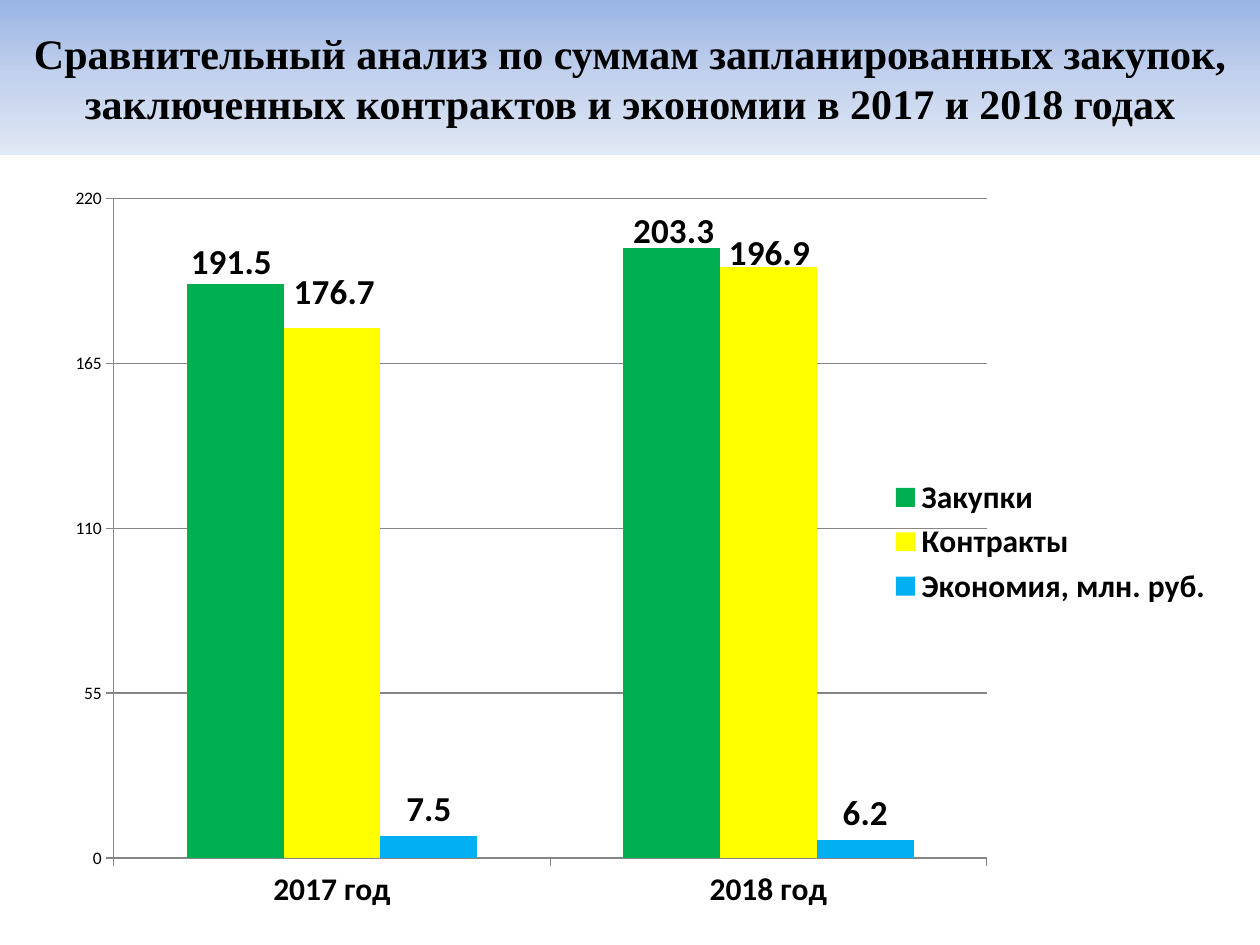
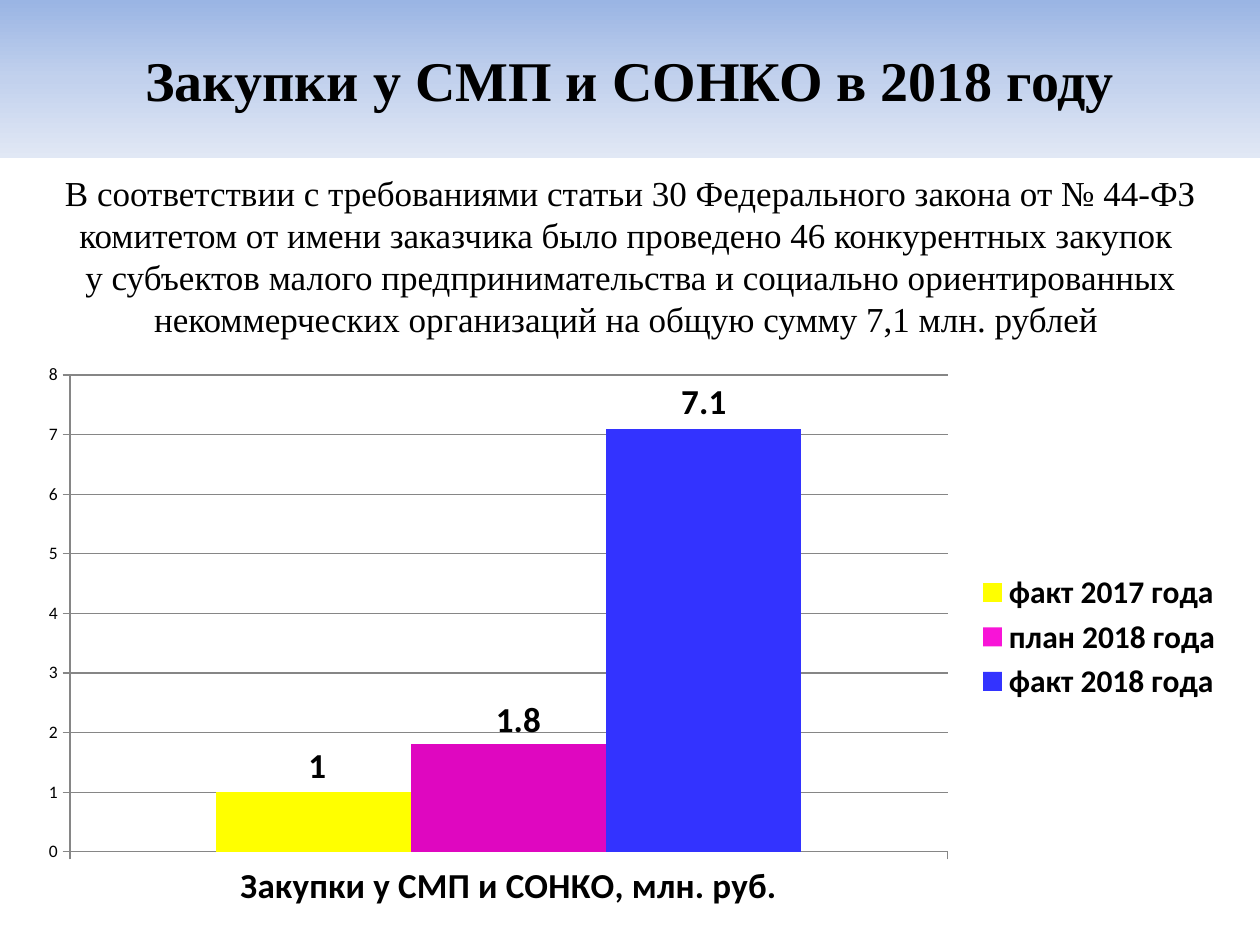
from copy import deepcopy
from dataclasses import dataclass, field

from lxml.etree import SubElement
from pptx import Presentation
from pptx.chart.data import CategoryChartData
from pptx.dml.color import RGBColor
from pptx.enum.chart import (XL_CHART_TYPE, XL_LABEL_POSITION,
                             XL_LEGEND_POSITION, XL_TICK_MARK)
from pptx.enum.text import MSO_ANCHOR, PP_ALIGN
from pptx.oxml.ns import qn
from pptx.util import Inches, Pt

W, H = Inches(10), Inches(7.5)
COLORS = {
    "text": "000000", "axis": "868686",
    "band_top": "9AB5E4", "band_mid": "C2D1ED", "band_low": "E1E8F5",
    "green": "00B050", "yellow": "FFFF00", "sky": "00B0F0",
    "pink": "F814D7", "magenta": "DF07C0", "blue": "3333FF",
}
BAND_STOPS = (("band_top", 0), ("band_mid", 0.5), ("band_low", 1))
SERIF, SANS = "Times New Roman", "Calibri"


@dataclass
class Box:
    """Left, top, width and height as percent of the enclosing area."""
    x: float
    y: float
    w: float
    h: float

    def emu(self) -> tuple[int, ...]:
        return tuple(int(side * share / 100) for side, share in
                     ((W, self.x), (H, self.y), (W, self.w), (H, self.h)))


@dataclass
class Series:
    name: str
    values: tuple[float, ...]
    color: str
    point_color: str = ""
    # Label shifts (x, y) per point, in percent of the chart
    shifts: dict[int, tuple[float, float]] = field(default_factory=dict)


@dataclass
class BarChart:
    box: Box
    plot: Box
    categories: tuple[str, ...]
    series: tuple[Series, ...]
    top: float
    step: float
    category_size: int


def rgb(name: str) -> RGBColor:
    return RGBColor.from_string(COLORS[name])


def set_font(font, **values) -> None:
    font.color.rgb = rgb("text")
    for name, value in values.items():
        setattr(font, name, value)


def place(sp, box: Box) -> None:
    for name, value in zip(("left", "top", "width", "height"), box.emu()):
        setattr(sp, name, value)


def write(sp, text: str, size: int, bold: bool) -> None:
    sp.text_frame.text = text
    p = sp.text_frame.paragraphs[0]
    p.alignment = PP_ALIGN.CENTER
    for r in p.runs:
        set_font(r.font, name=SERIF, size=Pt(size), bold=bold)


def add_title(slide, text: str, size: int, height: float) -> None:
    sp = slide.shapes.title
    place(sp, Box(0, 0, 100, height))
    sp.fill.gradient()
    sp.fill.gradient_angle = 270
    gs = next(sp._element.iter(qn("a:gs")))
    gs.addnext(deepcopy(gs))
    for stop, (color, position) in zip(sp.fill.gradient_stops, BAND_STOPS):
        stop.color.rgb = rgb(color)
        stop.position = position
    sp.text_frame.vertical_anchor = MSO_ANCHOR.MIDDLE
    write(sp, text, size, True)


def add_body(slide, text: str, size: int, box: Box) -> None:
    sp = slide.placeholders[1]
    place(sp, box)
    write(sp, text, size, False)
    pPr = sp.text_frame.paragraphs[0]._p.get_or_add_pPr()
    for name in ("marL", "indent"):
        pPr.set(name, "0")
    SubElement(pPr, qn("a:buNone"))


def add_layout(parent, **values) -> None:
    layout = SubElement(parent, qn("c:layout"))
    manual = SubElement(layout, qn("c:manualLayout"))
    for name, value in values.items():
        SubElement(manual, qn(f"c:{name}")).set("val", str(value))


def shift_label(labels, idx: int, dx: float, dy: float) -> None:
    """Give one point a copy of its series' label settings, moved."""
    group = labels._element
    dLbl = group.makeelement(qn("c:dLbl"))
    SubElement(dLbl, qn("c:idx")).set("val", str(idx))
    add_layout(dLbl, x=dx / 100, y=dy / 100)
    skipped = (qn("c:dLbl"), qn("c:showLeaderLines"))
    dLbl.extend(deepcopy(el) for el in group if el.tag not in skipped)
    group.insert(idx, dLbl)


def style_series(ser, item: Series) -> None:
    fills = [(ser.format.fill, item.color)]
    if item.point_color:
        fills.append((ser.points[0].format.fill, item.point_color))
    for fill, color in fills:
        fill.solid()
        fill.fore_color.rgb = rgb(color)
    ser.invert_if_negative = False
    labels = ser.data_labels
    labels.show_value = True
    labels.position = XL_LABEL_POSITION.OUTSIDE_END
    set_font(labels.font, name=SANS, size=Pt(20), bold=True)
    for idx, (dx, dy) in sorted(item.shifts.items()):
        shift_label(labels, idx, dx, dy)


def style_axes(chart, item: BarChart) -> None:
    cat, val = chart.category_axis, chart.value_axis
    val.minimum_scale, val.maximum_scale = 0, item.top
    val.major_unit = item.step
    val.has_major_gridlines = True
    for line in (cat.format.line, val.format.line, val.major_gridlines.format.line):
        line.color.rgb = rgb("axis")
        line.width = Pt(0.75)
    for axis, size, bold in ((cat, item.category_size, True), (val, 10, False)):
        axis.major_tick_mark = XL_TICK_MARK.OUTSIDE
        set_font(axis.tick_labels.font, name=SANS, size=Pt(size), bold=bold)


def add_bar_chart(slide, item: BarChart) -> None:
    data = CategoryChartData()
    data.categories = item.categories
    for s in item.series:
        data.add_series(s.name, s.values)
    chart = slide.shapes.add_chart(
        XL_CHART_TYPE.COLUMN_CLUSTERED, *item.box.emu(), data).chart
    set_font(chart.font, name=SANS, size=Pt(10))
    chart.has_title = False
    chart.has_legend = True
    chart.legend.position = XL_LEGEND_POSITION.RIGHT
    chart.legend.include_in_layout = False
    set_font(chart.legend.font, name=SANS, size=Pt(18), bold=True)
    style_axes(chart, item)

    plot = chart.plots[0]
    plot.gap_width, plot.overlap, plot.vary_by_categories = 150, 0, False
    for ser, s in zip(plot.series, item.series):
        style_series(ser, s)

    # Fixed inner plot area
    area = next(chart._chartSpace.iter(qn("c:plotArea")))
    for old in area.findall(qn("c:layout")):
        area.remove(old)
    sides = {name: getattr(item.plot, name) / 100 for name in "xywh"}
    add_layout(area, layoutTarget="inner", xMode="edge", yMode="edge", **sides)
    area.insert(0, area[-1])


COMPARISON = BarChart(
    Box(2.8, 17.47, 94.5, 79.73), Box(6.6, 4.4, 73.3, 87.6),
    ("2017 год", "2018 год"),
    (Series("Закупки", (191.5, 203.3), "green",
            shifts={0: (-0.3, 0.7), 1: (0.2, 1.2)}),
     Series("Контракты", (176.7, 196.9), "yellow",
            shifts={0: (0.2, -1.2), 1: (0.1, 1.6)}),
     Series("Экономия, млн. руб.", (7.5, 6.2), "sky")),
    top=220, step=55, category_size=18)

SMALL_BUSINESS = BarChart(
    Box(2, 37.47, 96.1, 59.87), Box(3.7, 3.7, 72.5, 84.3),
    ("Закупки у СМП и СОНКО, млн. руб.",),
    (Series("факт 2017 года", (1,), "yellow", shifts={0: (0.3, 0)}),
     Series("план 2018 года", (1.8,), "pink", "magenta", {0: (0.8, 0.3)}),
     Series("факт 2018 года", (7.1,), "blue")),
    top=8, step=1, category_size=20)


def main() -> None:
    prs = Presentation()
    prs.slide_width, prs.slide_height = W, H
    content, title_only = prs.slide_layouts[1], prs.slide_layouts[5]

    # Planned purchases, contracts and savings
    slide = prs.slides.add_slide(title_only)
    add_title(slide, "Сравнительный анализ по суммам запланированных закупок, "
              "заключенных контрактов и экономии в 2017 и 2018 годах", 24, 16.4)
    add_bar_chart(slide, COMPARISON)

    # Purchases from small businesses and non-profits
    slide = prs.slides.add_slide(content)
    add_title(slide, "Закупки у СМП и СОНКО в 2018 году", 32, 16.67)
    add_body(slide, "В соответствии с требованиями статьи 30 Федерального закона "
             "от № 44-ФЗ комитетом от имени заказчика было проведено 46 "
             "конкурентных закупок \vу субъектов малого предпринимательства и "
             "социально ориентированных некоммерческих организаций на общую "
             "сумму 7,1 млн. рублей ", 20, Box(2.8, 17.47, 94.5, 77.73))
    add_bar_chart(slide, SMALL_BUSINESS)

    prs.save("out.pptx")


if __name__ == "__main__":
    main()
